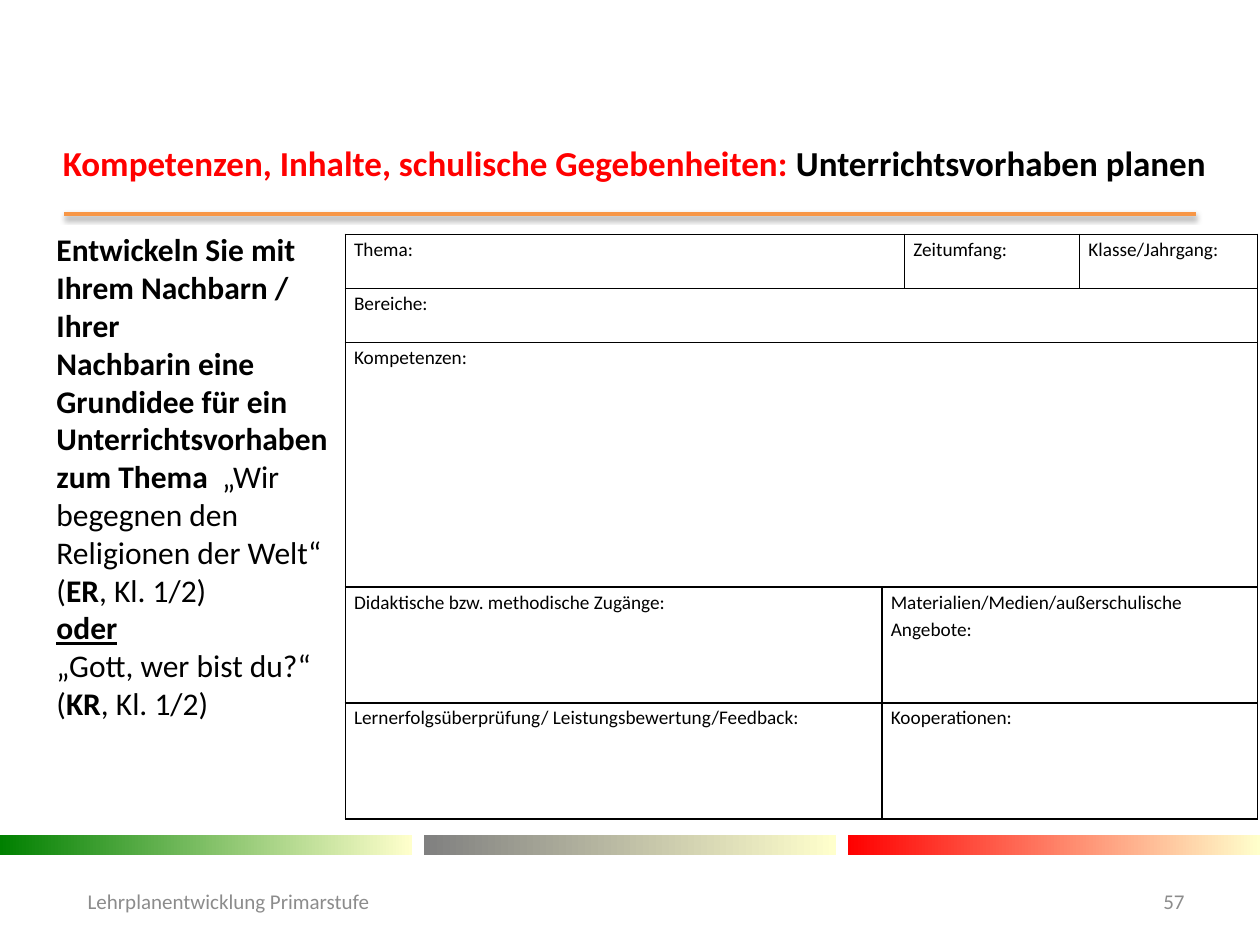
from lxml.etree import SubElement
from pptx import Presentation
from pptx.dml.color import RGBColor
from pptx.enum.shapes import MSO_CONNECTOR as Connector, MSO_SHAPE as Shape
from pptx.enum.text import MSO_ANCHOR as Anchor, PP_ALIGN as Align
from pptx.oxml import parse_xml
from pptx.oxml.ns import nsdecls, qn
from pptx.util import Inches, Pt

# The slide is a grid of 100 columns by 75 rows of square units
UNIT = Inches(0.1)
COLS, ROWS = 100, 75
FONT = "Calibri"
BLACK, RED, ORANGE, GREY, CREAM = "000000", "FF0000", "F79646", "8C8C8C", "FFFFCC"


def units(*counts):
    return [round(count * UNIT) for count in counts]


def color(hex_code):
    return RGBColor.from_string(hex_code)


def add_run(paragraph, text, size, hue=BLACK, bold=False, underline=False):
    run = paragraph.add_run()
    run.text = text
    font = run.font
    font.name, font.size, font.bold = FONT, Pt(size), bold
    font.underline = underline
    font.color.rgb = color(hue)


def add_text(slide, box, paragraphs, size, align=Align.LEFT, anchor=Anchor.TOP):
    """Each paragraph is a list of (text, style) runs."""
    frame = slide.shapes.add_textbox(*units(*box)).text_frame
    frame.word_wrap = True
    frame.vertical_anchor = anchor
    for index, runs in enumerate(paragraphs):
        paragraph = frame.add_paragraph() if index else frame.paragraphs[0]
        paragraph.alignment = align
        for text, style in runs:
            add_run(paragraph, text, size, **style)


def add_heading(slide, box):
    left, top, width, height = box
    # Orange rule with a soft shadow below the title
    rule = slide.shapes.add_connector(
        Connector.STRAIGHT, *units(left + 1.1, top + 6.3, left + 90.9, top + 6.3))
    rule.line.color.rgb = color(ORANGE)
    rule.line.width = Pt(2)
    rule._element.spPr.append(parse_xml(
        f'<a:effectLst {nsdecls("a")}><a:outerShdw blurRad="{Pt(3.1)}" dist="{Pt(1.6)}" '
        'dir="5400000" rotWithShape="0"><a:srgbClr val="000000"><a:alpha val="38000"/>'
        '</a:srgbClr></a:outerShdw></a:effectLst>'))
    add_text(slide, box, [[
        ("Kompetenzen, Inhalte, schulische Gegebenheiten: ", {"hue": RED, "bold": True}),
        ("Unterrichtsvorhaben planen", {"bold": True}),
    ]], 20)


def add_task(slide, box):
    bold, plain = {"bold": True}, {}
    add_text(slide, box, [
        [("Entwickeln Sie mit Ihrem Nachbarn / Ihrer", bold)],
        [("Nachbarin eine Grundidee für ein", bold)],
        [("Unterrichtsvorhaben zum Thema  ", bold),
         ("„Wir begegnen den Religionen der Welt“ (", plain),
         ("ER", bold), (", Kl. 1/2)", plain)],
        [("oder", {"bold": True, "underline": True})],
        [("„Gott, wer bist du?“ (", plain), ("KR", bold), (", Kl. 1/2)", plain)],
    ], 18)


def style_cell(cell):
    cell.margin_left = cell.margin_right = Inches(0.07)
    cell.margin_top = cell.margin_bottom = 0
    properties = cell._tc.get_or_add_tcPr()
    for side in ("a:lnL", "a:lnR", "a:lnT", "a:lnB"):
        border = SubElement(properties, qn(side), w=str(Pt(1)))
        SubElement(SubElement(border, qn("a:solidFill")), qn("a:srgbClr"), val=BLACK)
    cell.fill.background()


def add_planning_grid(slide, box):
    widths = (42.6, 1.1, 13.9, 14.1)
    heights = (4.3, 4.3, 19.4, 9.2, 9.2)
    # Per row: first column, last column, label
    fields = [
        [(0, 1, "Thema:"), (2, 2, "Zeitumfang:"), (3, 3, "Klasse/Jahrgang:")],
        [(0, 3, "Bereiche:")],
        [(0, 3, "Kompetenzen:")],
        [(0, 0, "Didaktische bzw. methodische Zugänge:"),
         (1, 3, "Materialien/Medien/außerschulische Angebote:")],
        [(0, 0, "Lernerfolgsüberprüfung/ Leistungsbewertung/Feedback:"),
         (1, 3, "Kooperationen:")],
    ]
    grid = slide.shapes.add_table(len(heights), len(widths), *units(*box)).table
    grid.first_row = grid.horz_banding = False
    for column, width in zip(grid.columns, units(*widths)):
        column.width = width
    for row, height in zip(grid.rows, units(*heights)):
        row.height = height
    for cell in grid.iter_cells():
        style_cell(cell)
    for row, labels in enumerate(fields):
        for first, last, label in labels:
            cell = grid.cell(row, first)
            if last > first:
                cell.merge(grid.cell(row, last))
            paragraph = cell.text_frame.paragraphs[0]
            paragraph.alignment = Align.JUSTIFY
            paragraph.line_spacing = 1.15
            add_run(paragraph, label, 11)


def add_color_bars(slide, box):
    left, top, width, height = box
    starts = ("008000", "808080", RED)
    bar_width = 32.7
    step = (width - bar_width) / (len(starts) - 1)
    for index, start in enumerate(starts):
        bar = slide.shapes.add_shape(
            Shape.RECTANGLE, *units(left + index * step, top, bar_width, height))
        bar.shadow.inherit = False
        bar.line.fill.background()
        bar.fill.gradient()
        bar.fill.gradient_angle = 0
        for stop, hue in zip(bar.fill.gradient_stops, (start, CREAM)):
            stop.color.rgb = color(hue)


def add_footer(slide, box):
    left, top, width, height = box
    grey = {"hue": GREY}
    add_text(slide, (left, top, 32.3, height),
             [[("Lehrplanentwicklung Primarstufe", grey)]], 12, Align.CENTER, Anchor.MIDDLE)
    add_text(slide, (left + width - 6.4, top, 6.4, height),
             [[("57", grey)]], 12, Align.RIGHT, Anchor.MIDDLE)


def main():
    deck = Presentation()
    deck.slide_width, deck.slide_height = units(COLS, ROWS)
    slide = deck.slides.add_slide(deck.slide_layouts[6])
    add_color_bars(slide, (0, 66.3, COLS, 1.6))
    add_heading(slide, (4, 10.7, 94.9, 4.4))
    add_planning_grid(slide, (27.4, 18.6, 71.7, 46.4))
    add_task(slide, (3.5, 17.8, 24.4, 43.4))
    add_footer(slide, (2, 69.5, 93, 4))
    deck.save("out.pptx")


if __name__ == "__main__":
    main()
